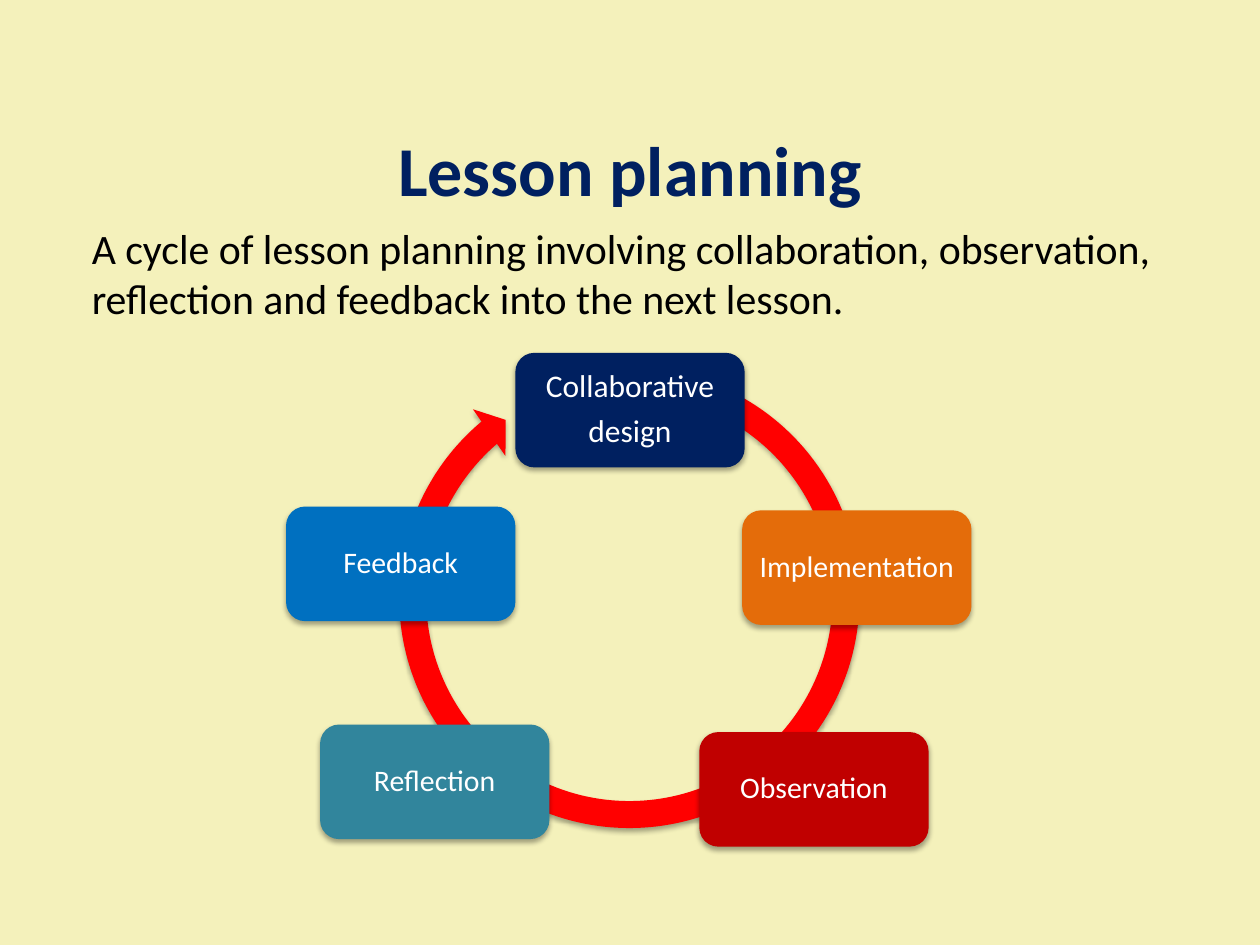
"""Build the lesson planning cycle slide."""
from lxml import etree
from pptx import Presentation
from pptx.dml.color import RGBColor
from pptx.enum.shapes import MSO_SHAPE
from pptx.enum.text import MSO_ANCHOR, PP_ALIGN
from pptx.oxml.ns import qn
from pptx.util import Inches, Pt

ROUNDED = MSO_SHAPE.ROUNDED_RECTANGLE
CIRCULAR_ARROW = MSO_SHAPE.CIRCULAR_ARROW
MIDDLE, TOP = MSO_ANCHOR.MIDDLE, MSO_ANCHOR.TOP
CENTER, LEFT = PP_ALIGN.CENTER, PP_ALIGN.LEFT

CREAM = RGBColor(0xF4, 0xF1, 0xBB)
NAVY = RGBColor(0x00, 0x20, 0x60)
RED = RGBColor(0xFF, 0x00, 0x00)
ORANGE = RGBColor(0xE4, 0x6C, 0x0A)
CRIMSON = RGBColor(0xC0, 0x00, 0x00)
TEAL = RGBColor(0x31, 0x85, 0x9C)
BLUE = RGBColor(0x00, 0x70, 0xC0)
WHITE = RGBColor(0xFF, 0xFF, 0xFF)
BLACK = RGBColor(0x00, 0x00, 0x00)

FONT = "Calibri"
STAGE_WIDTH, STAGE_HEIGHT, STAGE_INSET = 1.82, 0.91, 0.07
RING_ADJUSTMENTS = (0.055, 3.307, 137.818, 173.824, 0.058)
STAGES = [
    (4.09, 2.8, NAVY, 18, ["Collaborative", "design"]),
    (5.89, 4.05, ORANGE, 17, ["Implementation"]),
    (5.55, 5.81, CRIMSON, 17, ["Observation"]),
    (2.54, 5.75, TEAL, 17, ["Reflection"]),
    (2.27, 4.02, BLUE, 17, ["Feedback"]),
]


def add_run(paragraph, text, size, color, bold=False):
    """Add one styled run to a paragraph."""
    run = paragraph.add_run()
    run.text = text
    run.font.name = FONT
    run.font.size = Pt(size)
    run.font.bold = bold
    run.font.color.rgb = color


def add_text(slide, box, text, size, color, align, anchor, bold=False):
    """Add a wrapped text box holding one paragraph."""
    frame = slide.shapes.add_textbox(*map(Inches, box)).text_frame
    frame.word_wrap = True
    frame.vertical_anchor = anchor
    paragraph = frame.paragraphs[0]
    paragraph.alignment = align
    add_run(paragraph, text, size, color, bold)


def add_shadowed_shape(slide, kind, box, color):
    """Add a borderless filled shape with a soft shadow below it."""
    shape = slide.shapes.add_shape(kind, *map(Inches, box))
    shape.fill.solid()
    shape.fill.fore_color.rgb = color
    shape.line.fill.background()
    shape.shadow.inherit = False
    effects = shape._element.spPr.find(qn("a:effectLst"))
    shadow = etree.SubElement(
        effects, qn("a:outerShdw"), blurRad=str(Pt(3.1)), dist=str(Pt(1.8)),
        dir="5400000", rotWithShape="0")
    shade = etree.SubElement(shadow, qn("a:srgbClr"), val=str(BLACK))
    etree.SubElement(shade, qn("a:alpha"), val="35000")
    return shape


def add_ring(slide):
    """Add the circular arrow that links the stages."""
    ring = add_shadowed_shape(slide, CIRCULAR_ARROW, (3.05, 2.8, 3.89, 3.89), RED)
    for index, value in enumerate(RING_ADJUSTMENTS):
        ring.adjustments[index] = value


def add_stage(slide, left, top, color, size, lines):
    """Add one labelled stage of the cycle."""
    box = (left, top, STAGE_WIDTH, STAGE_HEIGHT)
    frame = add_shadowed_shape(slide, ROUNDED, box, color).text_frame
    frame.word_wrap = True
    frame.vertical_anchor = MIDDLE
    frame.margin_left = frame.margin_right = Inches(STAGE_INSET)
    frame.margin_top = frame.margin_bottom = Inches(STAGE_INSET)
    for index, line in enumerate(lines):
        paragraph = frame.add_paragraph() if index else frame.paragraphs[0]
        paragraph.alignment = CENTER
        paragraph.line_spacing = 0.9
        paragraph.space_after = Pt(0.35 * size)
        add_run(paragraph, line, size, WHITE)


def main():
    """Build and save the slide."""
    deck = Presentation()
    deck.slide_width, deck.slide_height = Inches(10), Inches(7.5)
    slide = deck.slides.add_slide(deck.slide_layouts[6])
    slide.background.fill.solid()
    slide.background.fill.fore_color.rgb = CREAM
    add_text(slide, (0.5, 0.71, 9, 1.25), "Lesson planning",
             40, NAVY, CENTER, MIDDLE, bold=True)
    add_text(slide, (0.63, 1.72, 8.75, 0.91),
             "A cycle of lesson planning involving collaboration, observation, "
             "reflection and feedback into the next lesson.",
             23.9, BLACK, LEFT, TOP)
    add_ring(slide)
    for stage in STAGES:
        add_stage(slide, *stage)
    deck.save("out.pptx")


if __name__ == "__main__":
    main()
